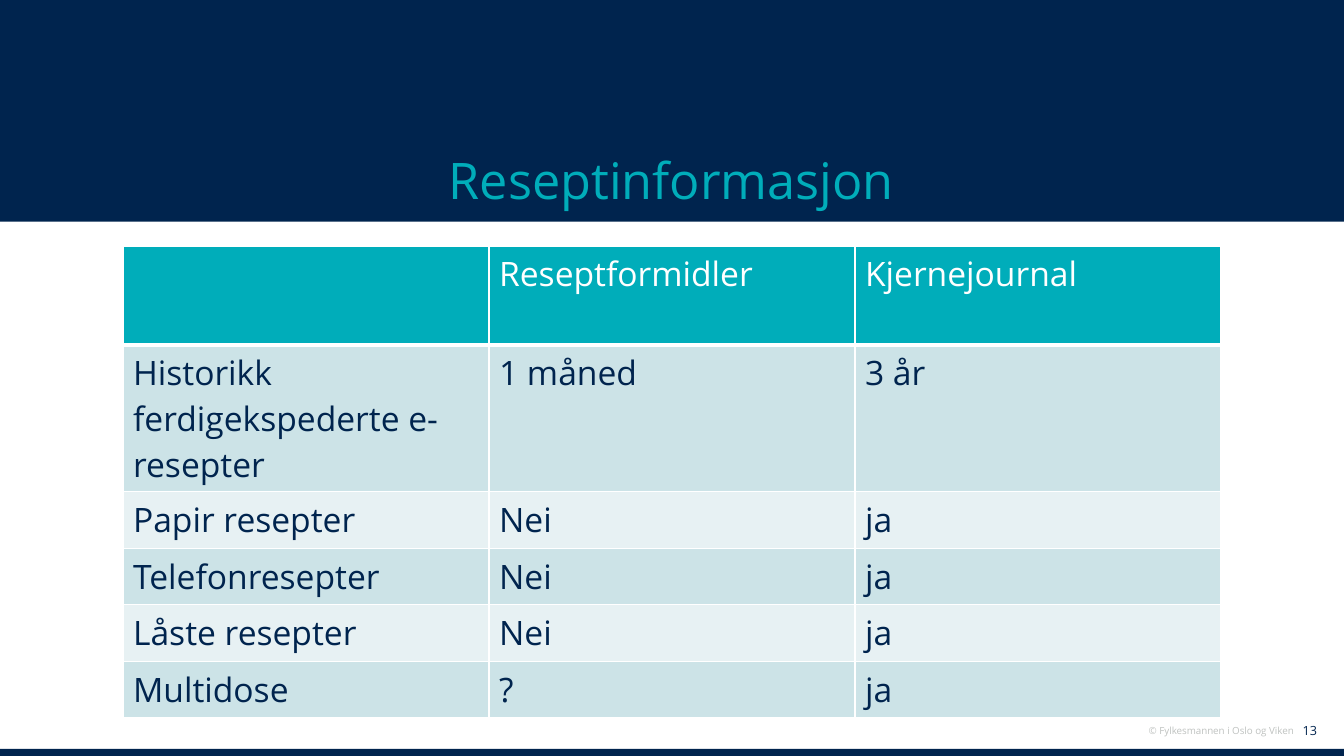
from dataclasses import dataclass

from lxml.etree import SubElement
from pptx import Presentation
from pptx.dml.color import RGBColor
from pptx.enum.shapes import MSO_SHAPE
from pptx.enum.text import MSO_ANCHOR, MSO_AUTO_SIZE, PP_ALIGN
from pptx.oxml.ns import qn
from pptx.util import Inches, Pt


@dataclass(frozen=True)
class Theme:
    """Colours, font and type sizes of the slide."""
    navy: str = "00244E"
    teal: str = "00ADBA"
    white: str = "FFFFFF"
    grey: str = "BFC2C0"
    bands: tuple = ("CCE3E7", "E7F1F3")
    font: str = "Open Sans"
    title: int = 36
    table: int = 24
    number: int = 9
    copyright: int = 7


THEME = Theme()
ROW_HEIGHTS = (0.98, 1.46, 0.56, 0.56, 0.56, 0.56)
PRESCRIPTIONS = (
    ("", "Reseptformidler", "Kjernejournal"),
    ("Historikk ferdigekspederte e-resepter", "1 måned", "3 år"),
    ("Papir resepter", "Nei", "ja"),
    ("Telefonresepter", "Nei", "ja"),
    ("Låste resepter", "Nei", "ja"),
    ("Multidose", "?", "ja"),
)


def write(frame, text, size, color, align=PP_ALIGN.LEFT):
    """Set one formatted paragraph in a text frame."""
    frame.text = text
    frame.word_wrap = True
    paragraph = frame.paragraphs[0]
    paragraph.alignment = align
    paragraph.font.size = Pt(size)
    for run in paragraph.runs:
        run.font.name = THEME.font
        run.font.size = Pt(size)
        run.font.bold = False
        run.font.color.rgb = RGBColor.from_string(color)


def add_band(slide, left, top, width, height):
    """Draw a navy band across the given box."""
    band = slide.shapes.add_shape(
        MSO_SHAPE.RECTANGLE, Inches(left), Inches(top), Inches(width), Inches(height))
    band.shadow.inherit = False
    band.fill.solid()
    band.fill.fore_color.rgb = RGBColor.from_string(THEME.navy)
    band.line.fill.background()


def add_header(slide, left, top, width, height):
    """Fill the header box and seat the title at its foot."""
    add_band(slide, left, top, width, height)
    title = slide.shapes.title
    title.left, title.top = Inches(left + 1.15), Inches(top + 0.95)
    title.width, title.height = Inches(width - 2.31), Inches(1.18)
    title.text_frame.vertical_anchor = MSO_ANCHOR.BOTTOM
    title.text_frame.auto_size = MSO_AUTO_SIZE.NONE
    write(title.text_frame, "Reseptinformasjon", THEME.title, THEME.teal, PP_ALIGN.CENTER)
    slide.shapes._spTree.append(title._element)


def add_footer(slide, left, top, width, height):
    """Place the copyright line, page number and bottom band in the box."""
    add_band(slide, left, top + height - 0.07, width, 0.07)
    notes = (
        ("© Fylkesmannen i Oslo og Viken", 10.85, 0.02, 2.08, 0.22, THEME.copyright, THEME.grey),
        ("13", 12.62, 0, 0.54, 0.26, THEME.number, THEME.navy),
    )
    for text, x, y, note_width, note_height, size, color in notes:
        note = slide.shapes.add_textbox(
            Inches(left + x), Inches(top + y), Inches(note_width), Inches(note_height))
        note.text_frame.vertical_anchor = MSO_ANCHOR.MIDDLE
        write(note.text_frame, text, size, color, PP_ALIGN.RIGHT)


def add_borders(cell, bottom):
    """Give a cell thin white borders and a bottom border of its own width."""
    properties = cell._tc.get_or_add_tcPr()
    for side, points in (("L", 1), ("R", 1), ("T", 1), ("B", bottom)):
        border = SubElement(properties, qn(f"a:ln{side}"), w=str(Pt(points)))
        SubElement(SubElement(border, qn("a:solidFill")), qn("a:srgbClr"), val=THEME.white)


def add_prescription_table(slide, left, top, width):
    """Build the banded comparison table in the box."""
    table = slide.shapes.add_table(
        len(PRESCRIPTIONS), len(PRESCRIPTIONS[0]), Inches(left), Inches(top),
        Inches(width), Inches(sum(ROW_HEIGHTS))).table
    for column in table.columns:
        column.width = Inches(width / len(table.columns))
    for index, (labels, height) in enumerate(zip(PRESCRIPTIONS, ROW_HEIGHTS)):
        heading = index == 0
        table.rows[index].height = Inches(height)
        fill = THEME.teal if heading else THEME.bands[(index - 1) % 2]
        for cell, label in zip(table.rows[index].cells, labels):
            add_borders(cell, 3 if heading else 1)
            cell.fill.solid()
            cell.fill.fore_color.rgb = RGBColor.from_string(fill)
            write(cell.text_frame, label, THEME.table, THEME.white if heading else THEME.navy)


def main():
    """Build and save the slide."""
    presentation = Presentation()
    presentation.slide_width, presentation.slide_height = Inches(13.33), Inches(7.5)
    slide = presentation.slides.add_slide(presentation.slide_layouts[5])
    add_header(slide, 0, 0, 13.33, 2.2)
    add_footer(slide, 0, 7.12, 13.33, 0.38)
    add_prescription_table(slide, 1.22, 2.44, 10.89)
    presentation.save("out.pptx")


if __name__ == "__main__":
    main()
